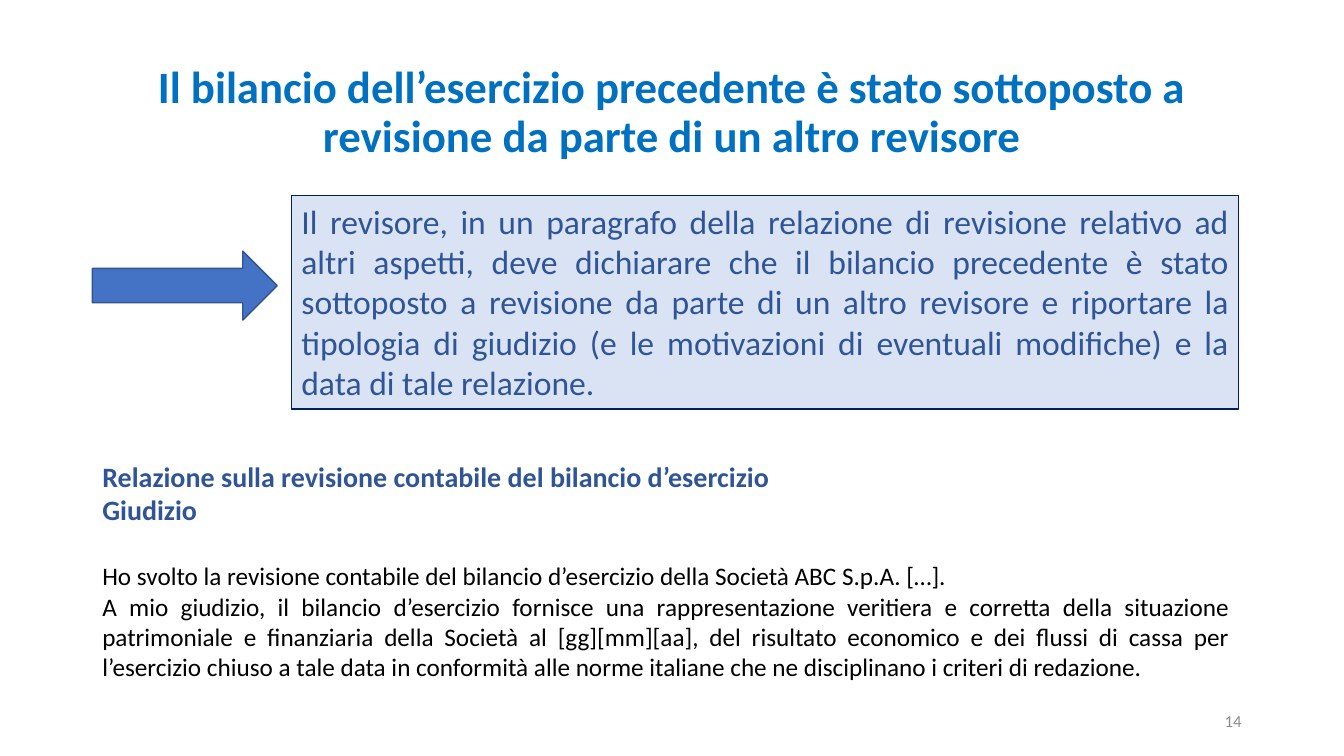
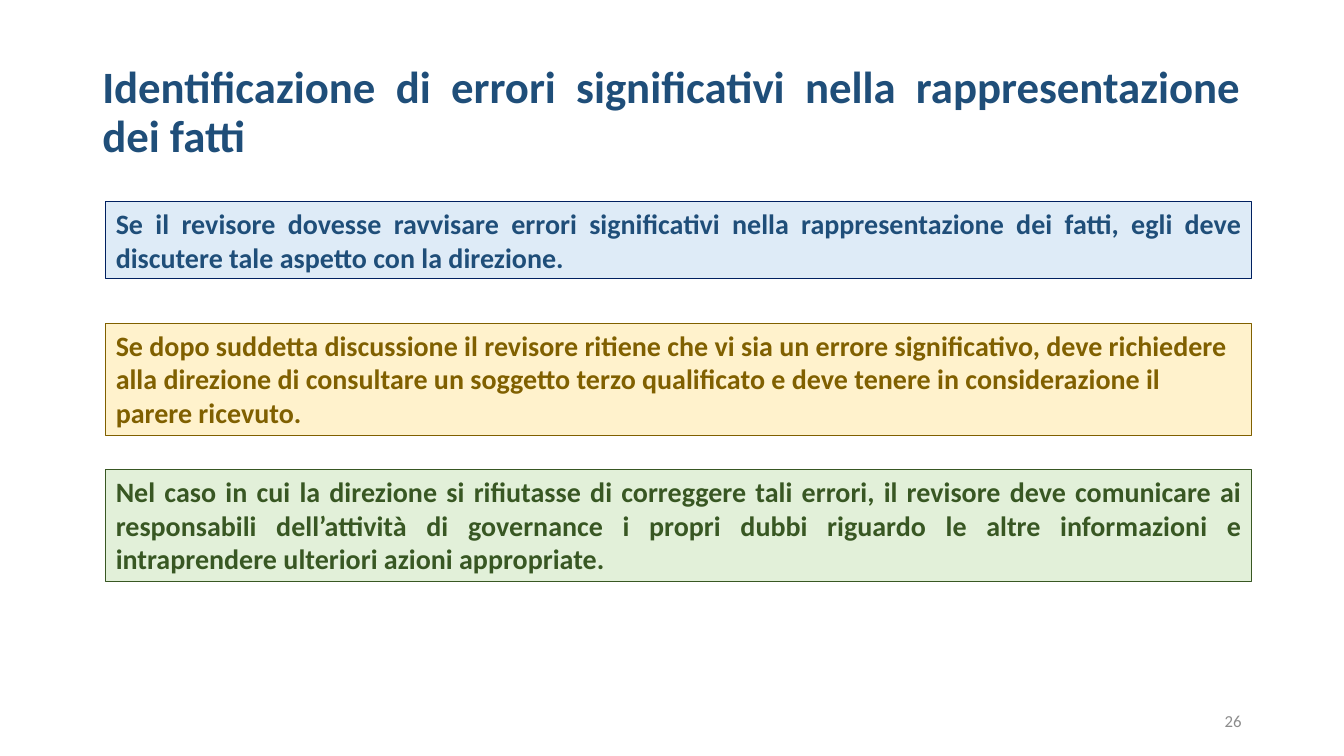
from dataclasses import dataclass
from typing import Optional

from pptx import Presentation
from pptx.dml.color import RGBColor
from pptx.enum.shapes import MSO_SHAPE
from pptx.enum.text import MSO_ANCHOR, PP_ALIGN
from pptx.util import Inches, Pt


@dataclass(frozen=True)
class Theme:
    font: str = "Calibri"
    azure: str = "0070C0"
    blue: str = "2F5597"
    pale: str = "DAE3F3"
    arrow: str = "4472C4"
    edge: str = "325491"
    navy: str = "002060"
    steel: str = "1F4E79"
    sky: str = "DEEBF7"
    gold: str = "806000"
    cream: str = "FFF2CC"
    green: str = "385723"
    mint: str = "E2F0D9"
    black: str = "000000"
    grey: str = "8C8C8C"
    title: int = 32
    lead: int = 24
    head: int = 20
    body: int = 18
    foot: int = 12
    thin: float = 0.75


@dataclass(frozen=True)
class Area:
    col: float
    row: float
    cols: float
    rows: float


@dataclass(frozen=True)
class Para:
    text: str
    size: int
    color: str
    bold: bool = False
    align: PP_ALIGN = PP_ALIGN.JUSTIFY
    before: float = 0
    pitch: float = 1.0


@dataclass(frozen=True)
class Box:
    area: Area
    paras: tuple = ()
    fill: Optional[str] = None
    line: Optional[str] = None
    width: float = 0.75
    kind: MSO_SHAPE = MSO_SHAPE.RECTANGLE
    anchor: MSO_ANCHOR = MSO_ANCHOR.TOP


@dataclass(frozen=True)
class Page:
    title: str
    color: str
    align: PP_ALIGN
    number: int
    boxes: tuple


T = Theme()
COLS, ROWS = 160, 90
UNIT = Inches(7.5) / ROWS
LEFT = 11
HEAD = Area(LEFT, 4.8, 138, 17.4)
FOOT = Area(113, 83.4, 36, 4.8)


def write(shape, box: Box) -> None:
    frame = shape.text_frame
    frame.word_wrap = True
    frame.vertical_anchor = box.anchor
    frame.text = "\n".join(para.text for para in box.paras)
    for item, para in zip(frame.paragraphs, box.paras):
        item.alignment = para.align
        item.line_spacing = para.pitch
        item.space_before = Pt(para.before)
        for run in item.runs:
            run.font.name = T.font
            run.font.size = Pt(para.size)
            run.font.bold = para.bold
            run.font.color.rgb = RGBColor.from_string(para.color)


def draw(slide, box: Box) -> None:
    area = box.area
    place = [round(n * UNIT) for n in (area.col, area.row, area.cols, area.rows)]
    if box.fill:
        shape = slide.shapes.add_shape(box.kind, *place)
        shape.shadow.inherit = False
        shape.fill.solid()
        shape.fill.fore_color.rgb = RGBColor.from_string(box.fill)
        shape.line.color.rgb = RGBColor.from_string(box.line)
        shape.line.width = Pt(box.width)
    else:
        shape = slide.shapes.add_textbox(*place)
    if box.paras:
        write(shape, box)


def build(deck, page: Page) -> None:
    slide = deck.slides.add_slide(deck.slide_layouts[6])
    title = Para(page.title, T.title, page.color, True, page.align, pitch=0.9)
    foot = Para(str(page.number), T.foot, T.grey, align=PP_ALIGN.RIGHT)
    draw(slide, Box(HEAD, (title,), anchor=MSO_ANCHOR.MIDDLE))
    for box in page.boxes:
        draw(slide, box)
    draw(slide, Box(FOOT, (foot,), anchor=MSO_ANCHOR.MIDDLE))


def step(row: float, rows: float, text: str, color: str, fill: str,
         line: str, align: PP_ALIGN = PP_ALIGN.JUSTIFY) -> Box:
    para = Para(text, T.head, color, True, align)
    return Box(Area(12.6, row, 136.4, rows), (para,), fill, line, T.thin)


PAGES = (
    Page(
        "Il bilancio dell’esercizio precedente è stato sottoposto a "
        "revisione da parte di un altro revisore",
        T.azure, PP_ALIGN.CENTER, 14,
        (
            Box(Area(34.7, 23.3, 112.8, 25.4), (Para(
                "Il revisore, in un paragrafo della relazione di revisione "
                "relativo ad altri aspetti, deve dichiarare che il bilancio "
                "precedente è stato sottoposto a revisione da parte di un "
                "altro revisore e riportare la tipologia di giudizio (e le "
                "motivazioni di eventuali modifiche) e la data di tale "
                "relazione.", T.lead, T.blue),),
                T.pale, T.navy, T.thin),
            Box(Area(LEFT, 29.9, 22, 8.2), fill=T.arrow, line=T.edge,
                width=1, kind=MSO_SHAPE.RIGHT_ARROW),
            Box(Area(LEFT, 54.1, 136.6, 27.8), (
                Para("Relazione sulla revisione contabile del bilancio "
                     "d’esercizio", T.head, T.blue, True, PP_ALIGN.LEFT),
                Para("Giudizio", T.head, T.blue, True, PP_ALIGN.LEFT),
                Para("Ho svolto la revisione contabile del bilancio "
                     "d’esercizio della Società ABC S.p.A. […].",
                     T.body, T.black, before=24.4),
                Para("A mio giudizio, il bilancio d’esercizio fornisce una "
                     "rappresentazione veritiera e corretta della situazione "
                     "patrimoniale e finanziaria della Società al "
                     "[gg][mm][aa], del risultato economico e dei flussi di "
                     "cassa per l’esercizio chiuso a tale data in conformità "
                     "alle norme italiane che ne disciplinano i criteri di "
                     "redazione.", T.body, T.black),
            )),
        ),
    ),
    Page(
        "Identificazione di errori significativi nella rappresentazione "
        "dei fatti",
        T.steel, PP_ALIGN.JUSTIFY, 26,
        (
            step(24, 9.2,
                 "Se il revisore dovesse ravvisare errori significativi nella "
                 "rappresentazione dei fatti, egli deve discutere tale "
                 "aspetto con la direzione.", T.steel, T.sky, T.navy),
            step(38.5, 13.3,
                 "Se dopo suddetta discussione il revisore ritiene che vi sia "
                 "un errore significativo, deve richiedere alla direzione di "
                 "consultare un soggetto terzo qualificato e deve tenere in "
                 "considerazione il parere ricevuto.",
                 T.gold, T.cream, T.gold, PP_ALIGN.LEFT),
            step(55.9, 13.3,
                 "Nel caso in cui la direzione si rifiutasse di correggere "
                 "tali errori, il revisore deve comunicare ai responsabili "
                 "dell’attività di governance i propri dubbi riguardo le "
                 "altre informazioni e intraprendere ulteriori azioni "
                 "appropriate.", T.green, T.mint, T.green),
        ),
    ),
)


def main() -> None:
    deck = Presentation()
    deck.slide_width = round(COLS * UNIT)
    deck.slide_height = round(ROWS * UNIT)
    for page in PAGES:
        build(deck, page)
    deck.save("out.pptx")


if __name__ == "__main__":
    main()
